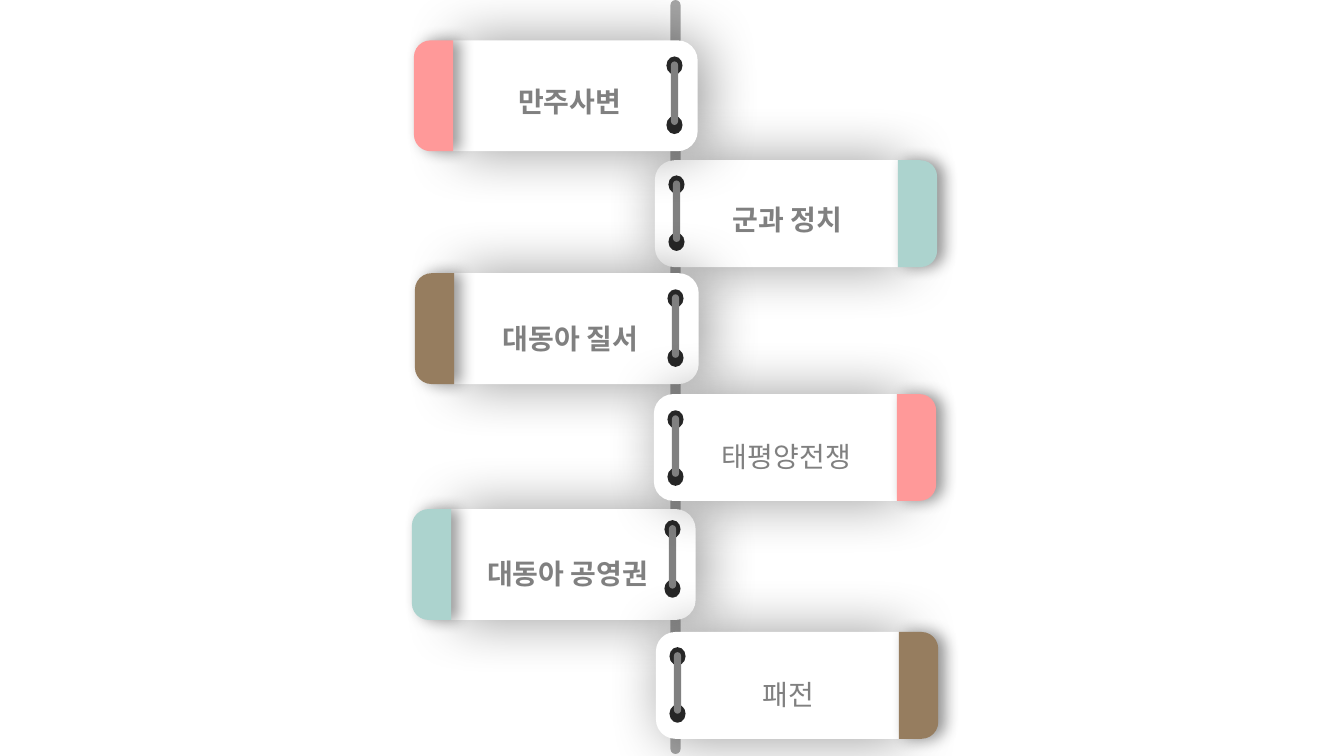
from dataclasses import dataclass

from lxml.etree import SubElement
from pptx import Presentation
from pptx.dml.color import RGBColor as RGB
from pptx.enum.shapes import MSO_SHAPE as Kind
from pptx.enum.text import MSO_AUTO_SIZE as Fit, PP_ALIGN as Align
from pptx.oxml.ns import qn
from pptx.util import Inches, Pt


@dataclass(frozen=True)
class Theme:
    pole: str = "A6A6A6"
    card: str = "FFFFFF"
    hole: str = "262626"
    gray: str = "808080"
    pink: str = "FF9999"
    mint: str = "ACD3CE"
    brown: str = "967D5F"
    shade: str = "000000"
    size: int = 20
    bold: str = "Noto Sans CJK KR"
    plain: str = "Noto Sans"


class Board:
    """Style and current slide; lengths are columns and rows of 0.1 inch."""
    CELL = 0.1

    def __init__(self, theme):
        self.theme = theme
        self.deck = Presentation()
        self.deck.slide_width, self.deck.slide_height = Inches(13.33), Inches(7.5)
        self.slide = self.deck.slides.add_slide(self.deck.slide_layouts[6])
        self.shapes = self.slide.shapes

    def group(self):
        self.shapes = self.slide.shapes.add_group_shape().shapes

    def box(self, mid, top, wide, high):
        return [Inches(v * self.CELL) for v in (mid - wide / 2, top, wide, high)]

    def shape(self, kind, color, mid, top, wide, high, adjust=(), turn=0, blur=0):
        item = self.shapes.add_shape(kind, *self.box(mid, top, wide, high))
        item.fill.solid()
        item.fill.fore_color.rgb = RGB.from_string(color)
        item.line.fill.background()
        item.shadow.inherit = False
        item.rotation = turn
        for i, value in enumerate(adjust):
            item.adjustments[i] = value
        if blur:
            self.shade(item, blur)

    def shade(self, item, blur):
        effects = item._element.spPr.find(qn("a:effectLst"))
        outer = SubElement(effects, qn("a:outerShdw"), blurRad=str(Pt(blur)),
                           dist=str(Pt(5)), dir="0", algn="ctr", rotWithShape="0")
        color = SubElement(outer, qn("a:srgbClr"), val=self.theme.shade)
        SubElement(color, qn("a:alpha"), val="40000")

    def side(self, color, mid, top, wide, high, adjust, turn, blur):
        # The shape is turned a quarter, so its width and height swap
        self.shape(Kind.ROUND_2_SAME_RECTANGLE, color, mid, top + (high - wide) / 2,
                   high, wide, adjust, turn, blur)

    def bar(self, color, mid, top, wide, high):
        self.shape(Kind.ROUNDED_RECTANGLE, color, mid, top, wide, high, [0.5])

    def ring(self, mid, top, gap):
        for step in (0, gap):
            self.shape(Kind.OVAL, self.theme.hole, mid, top + step, 1.6, 1.8)
        self.bar(self.theme.gray, mid, top + 0.5, 0.7, gap + 0.4)

    def text(self, words, bold, mid, top, wide, high):
        frame = self.shapes.add_textbox(*self.box(mid, top, wide, high)).text_frame
        para = frame.paragraphs[0]
        run = para.add_run()
        face = self.theme.bold if bold else self.theme.plain
        formats = (
            (frame, {"word_wrap": True, "auto_size": Fit.SHAPE_TO_FIT_TEXT}),
            (para, {"alignment": Align.CENTER, "line_spacing": 1.5}),
            (run, {"text": words}),
            (run.font, {"name": face, "size": Pt(self.theme.size), "bold": bold}),
            (run.font.color, {"rgb": RGB.from_string(self.theme.gray)}),
        )
        for target, values in formats:
            for name, value in values.items():
                setattr(target, name, value)
        SubElement(run.font._element, qn("a:ea"), typeface=face)

    def card(self, form, words, bold, color, mid, top, hole, drop):
        way, wide, high, turn, gap, shift, room = form
        self.group()
        self.side(self.theme.card, mid, top, wide, high, (0, 0.182), turn, 41)
        self.side(color, mid + way * 14, top, 3.9, high, (0.422, 0), turn, 11)
        self.ring(mid - way * 9.9, top + hole, gap)
        self.text(words, bold, mid + shift, top + drop, room, 5.4)


def main():
    look = Theme()
    board = Board(look)

    # Central pole
    board.bar(look.pole, 67, 0, 1, 74.8)

    # Side, width, height, turn, hole gap, text shift, text width
    left = (-1, 24.4, 11, 270, 5.9, -0.5, 21.9)
    right = (1, 24.1, 10.6, 90, 5.7, 1.1, 17.9)

    # Cards from back to front: middle, top, hole offset, text offset
    cards = (
        (right, "군과 정치", True, look.mint, 77, 15.9, 1.5, 2),
        (left, "대동아 공영권", True, look.mint, 56.8, 50.5, 1.1, 2.6),
        (left, "대동아 질서", True, look.brown, 57.1, 27.1, 1.6, 2.6),
        (left, "만주사변", True, look.pink, 57, 4, 1.6, 2.2),
        (right, "패전", False, look.brown, 77.1, 62.7, 1.5, 2.4),
        (right, "태평양전쟁", False, look.pink, 76.9, 39.1, 1.6, 2.3),
    )
    for card in cards:
        board.card(*card)

    board.deck.save("out.pptx")


if __name__ == "__main__":
    main()
